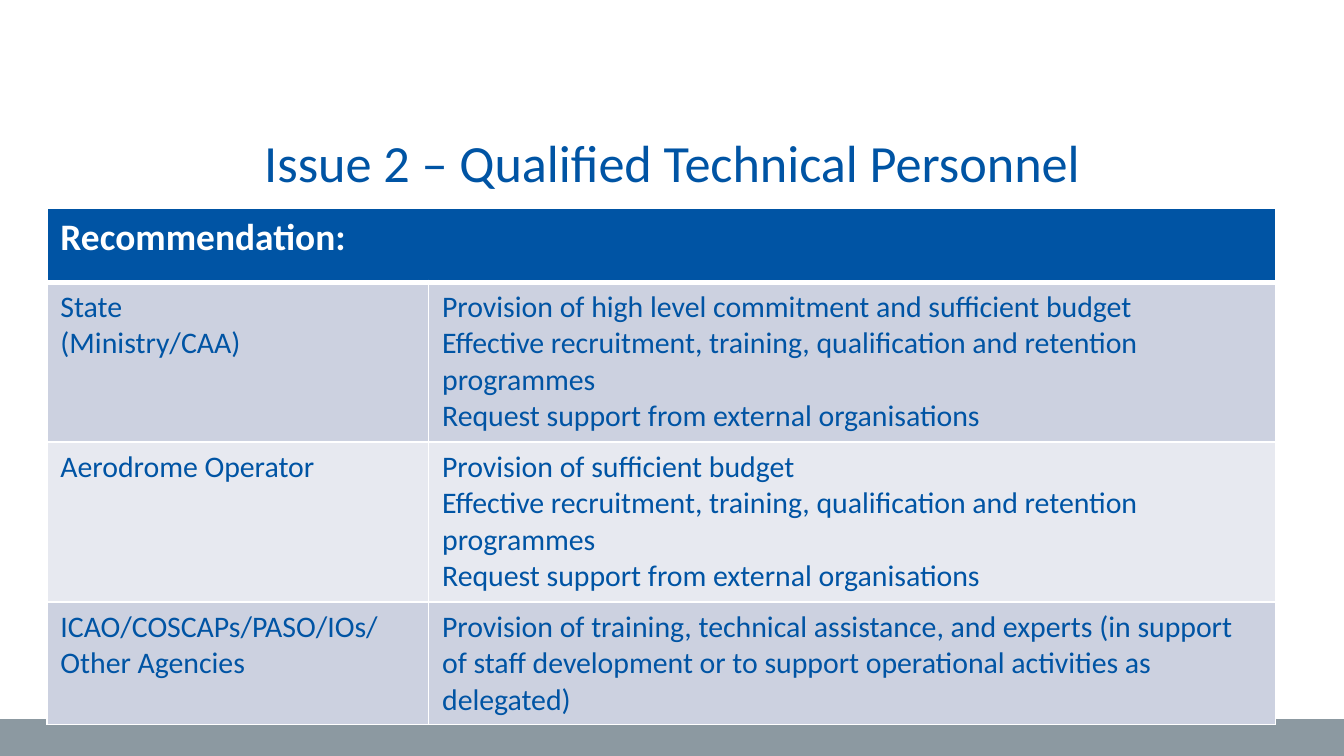
import pptx
import pptx.dml.color
import pptx.enum.shapes
import pptx.enum.text
import pptx.oxml
import pptx.oxml.ns
import pptx.util

WIDTH = 10
HEIGHT = WIDTH * 9 / 16
COLUMNS = [2.84, 6.3]
ROWS = [0.55, 1.19, 1.19, 0.91]
BLUE, WHITE, GREY = "0054A4", "FFFFFF", "8C99A1"
BANDS = ["CCD1E0", "E7E9F0"]
TITLE = {"name": "Calibri", "size": pptx.util.Pt(28), "bold": False}
HEADING = {"name": "Calibri", "size": pptx.util.Pt(20), "bold": True}
BODY = {"name": "Calibri", "size": pptx.util.Pt(16), "bold": False}
TRAINING = "Effective recruitment, training, qualification and retention programmes"
SUPPORT = "Request support from external organisations"
RECOMMENDATIONS = [
    (["State", "(Ministry/CAA)"],
     ["Provision of high level commitment and sufficient budget", TRAINING, SUPPORT]),
    (["Aerodrome Operator"],
     ["Provision of sufficient budget", TRAINING, SUPPORT]),
    (["ICAO/COSCAPs/PASO/IOs/ Other Agencies"],
     ["Provision of training, technical assistance, and experts (in support of "
      "staff development or to support operational activities as delegated)"]),
]


def color(value):
    """Turn a hex string into a colour."""
    return pptx.dml.color.RGBColor.from_string(value)


def place(left, top, width, height):
    """Turn lengths in inches into a position and size."""
    return [pptx.util.Inches(length) for length in (left, top, width, height)]


def write(frame, lines, style, ink):
    """Write one paragraph per line in the given style."""
    for index, line in enumerate(lines):
        para = frame.add_paragraph() if index else frame.paragraphs[0]
        span = para.add_run()
        span.text = line
        for name, value in style.items():
            setattr(span.font, name, value)
        span.font.color.rgb = color(ink)


def add_footer(page):
    """Draw the band along the foot of the page."""
    top = 5.35
    band = page.shapes.add_shape(pptx.enum.shapes.MSO_SHAPE.RECTANGLE,
                                 *place(0, top, WIDTH, HEIGHT - top))
    band.shadow.inherit = False
    band.fill.solid()
    band.fill.fore_color.rgb = color(GREY)
    band.line.fill.background()


def add_title(page, text):
    """Add the centred title."""
    box = page.shapes.add_textbox(*place(0.5, 0.92, WIDTH - 1, 0.47))
    frame = box.text_frame
    layout = {"word_wrap": True, "vertical_anchor": pptx.enum.text.MSO_ANCHOR.TOP}
    for name, value in layout.items():
        setattr(frame, name, value)
    write(frame, [text], TITLE, BLUE)
    frame.paragraphs[0].alignment = pptx.enum.text.PP_ALIGN.CENTER


def add_borders(cell, widths):
    """Draw white cell borders, given a width in points for each side."""
    properties = cell._tc.get_or_add_tcPr()
    for index, (side, width) in enumerate(widths.items()):
        border = pptx.oxml.parse_xml(
            f'<a:ln{side} {pptx.oxml.ns.nsdecls("a")} w="{pptx.util.Pt(width)}">'
            f'<a:solidFill><a:srgbClr val="{WHITE}"/></a:solidFill></a:ln{side}>')
        properties.insert(index, border)


def fill_cell(cell, lines, style, ink, fill, top=1, bottom=1):
    """Fill a cell with text, colour and borders."""
    write(cell.text_frame, lines, style, ink)
    cell.fill.solid()
    cell.fill.fore_color.rgb = color(fill)
    add_borders(cell, {"L": 1, "R": 1, "T": top, "B": bottom})


def add_recommendations(page):
    """Add the table of recommendations under one merged heading."""
    table = page.shapes.add_table(
        len(ROWS), len(COLUMNS), *place(0.35, 1.55, sum(COLUMNS), sum(ROWS))).table
    for column, width in zip(table.columns, COLUMNS):
        column.width = pptx.util.Inches(width)
    for row, height in zip(table.rows, ROWS):
        row.height = pptx.util.Inches(height)
    table.cell(0, 0).merge(table.cell(0, 1))
    fill_cell(table.cell(0, 0), ["Recommendation:"], HEADING, WHITE, BLUE, bottom=3)
    add_borders(table.cell(0, 1), {"L": 1, "R": 1, "T": 1, "B": 3})
    for row, entry in enumerate(RECOMMENDATIONS, 1):
        for column, lines in enumerate(entry):
            fill_cell(table.cell(row, column), lines, BODY, BLUE,
                      BANDS[(row - 1) % 2], top=3 if row == 1 else 1)


def main():
    """Build the slide and save it."""
    deck = pptx.Presentation()
    deck.slide_width = pptx.util.Inches(WIDTH)
    deck.slide_height = pptx.util.Inches(HEIGHT)
    page = deck.slides.add_slide(deck.slide_layouts[6])
    add_footer(page)
    add_title(page, "Issue 2 – Qualified Technical Personnel")
    add_recommendations(page)
    deck.save("out.pptx")


if __name__ == "__main__":
    main()
